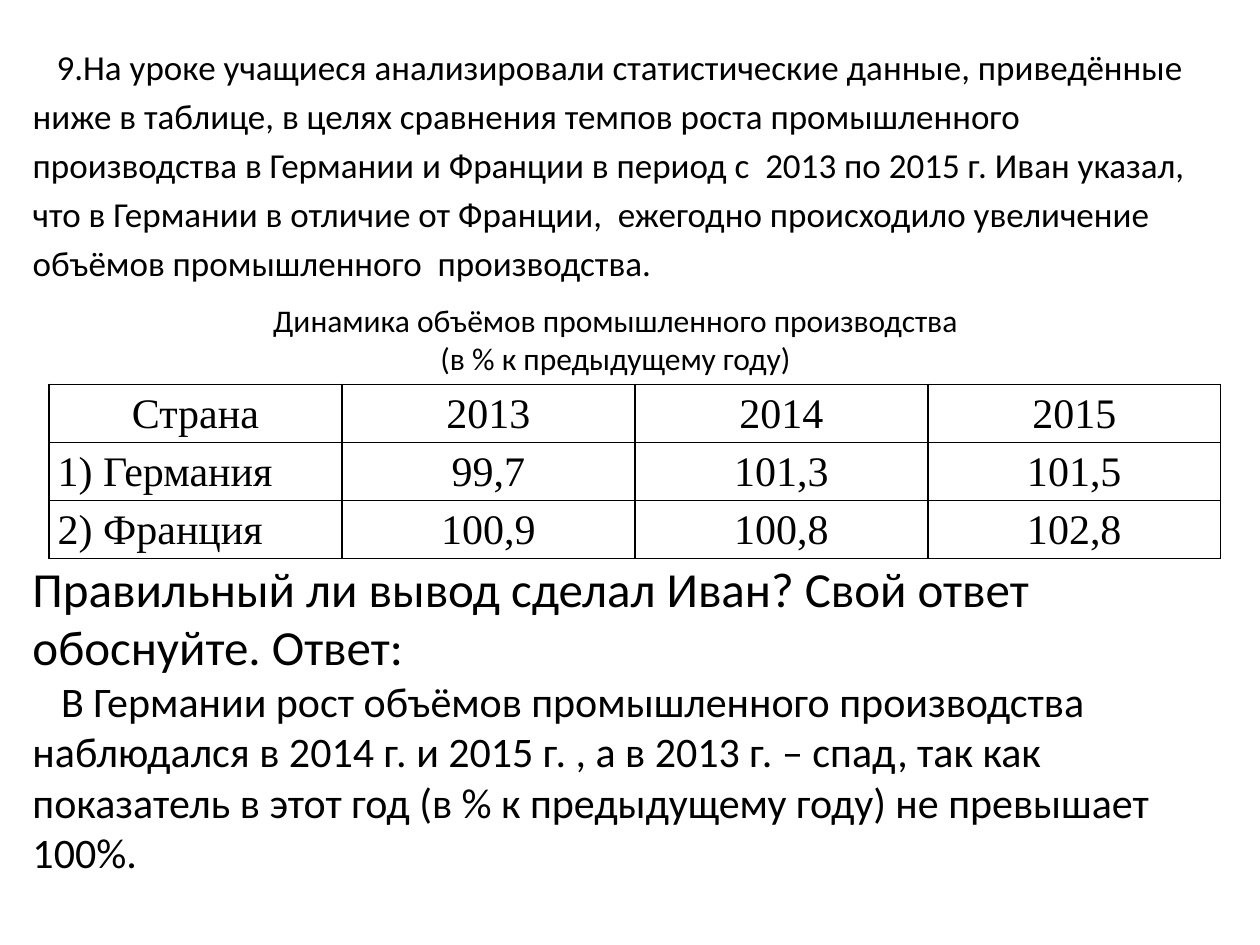
from dataclasses import dataclass

from lxml import etree
from pptx import Presentation
from pptx.dml.color import RGBColor
from pptx.enum import text
from pptx.oxml import ns
from pptx.util import Pt


@dataclass(frozen=True)
class Theme:
    ink: RGBColor = RGBColor(0, 0, 0)
    body_font: str = "Calibri"
    table_font: str = "Times New Roman"
    intro: int = 20
    caption: int = 18
    table: int = 24
    answer: int = 24
    question: int = 28
    border: int = 1


THEME = Theme()
LEFT = 11.5
TEXT_WIDTH = 697.5

INTRO = [
    "9.На уроке учащиеся анализировали статистические данные, приведённые",
    "ниже в таблице, в целях сравнения темпов роста промышленного",
    "производства в Германии и Франции в период с  2013 по 2015 г. Иван указал,",
    "что в Германии в отличие от Франции,  ежегодно происходило увеличение",
    "объёмов промышленного  производства.",
]
CAPTION = ["Динамика объёмов промышленного производства", "(в % к предыдущему году)"]
ROWS = [
    ["Страна", "2013", "2014", "2015"],
    ["1) Германия", "99,7", "101,3", "101,5"],
    ["2) Франция", "100,9", "100,8", "102,8"],
]
QUESTION = ["Правильный ли вывод сделал Иван? Свой ответ обоснуйте. Ответ:"]
ANSWER = [
    "В Германии рост объёмов промышленного производства наблюдался "
    "в 2014 г. и 2015 г. , а в 2013 г. – спад, так как показатель в этот год "
    "(в % к предыдущему году) не превышает 100%."
]


def add_run(paragraph, words, size, font=THEME.body_font):
    run = paragraph.add_run()
    run.text = words
    run.font.size = Pt(size)
    run.font.name = font
    run.font.color.rgb = THEME.ink


def set_indent(paragraph, first_line):
    properties = paragraph._p.get_or_add_pPr()
    properties.set("marL", "0")
    properties.set("indent", str(Pt(first_line)))


def fill_frame(frame, lines, size, align=text.PP_ALIGN.LEFT, first_line=0):
    frame.word_wrap = True
    for index, line in enumerate(lines):
        paragraph = frame.add_paragraph() if index else frame.paragraphs[0]
        paragraph.alignment = align
        set_indent(paragraph, 0 if index else first_line)
        add_run(paragraph, line, size)


def place_body(slide, left, top, width, height, lines, size, first_line):
    body = slide.placeholders[1]
    body.left, body.top, body.width, body.height = map(Pt, (left, top, width, height))
    fill_frame(body.text_frame, lines, size, first_line=first_line)
    body.text_frame.auto_size = text.MSO_AUTO_SIZE.NONE
    for paragraph in body.text_frame.paragraphs:
        etree.SubElement(paragraph._p.get_or_add_pPr(), ns.qn("a:buNone"))


def add_text(slide, left, top, width, height, lines, size, **layout):
    box = slide.shapes.add_textbox(*map(Pt, (left, top, width, height)))
    fill_frame(box.text_frame, lines, size, **layout)
    box.text_frame.auto_size = text.MSO_AUTO_SIZE.SHAPE_TO_FIT_TEXT


def set_borders(cell):
    properties = cell._tc.get_or_add_tcPr()
    for position, side in enumerate(("lnL", "lnR", "lnT", "lnB")):
        line = etree.Element(ns.qn(f"a:{side}"), w=str(Pt(THEME.border)))
        fill = etree.SubElement(line, ns.qn("a:solidFill"))
        etree.SubElement(fill, ns.qn("a:srgbClr"), val=str(THEME.ink))
        properties.insert(position, line)


def add_data_table(slide, left, top, width, height, rows):
    frame = slide.shapes.add_table(
        len(rows), len(rows[0]), *map(Pt, (left, top, width, height))
    )
    table = frame.table
    table.first_row = table.horz_banding = False
    for row_index, row in enumerate(rows):
        for column_index, value in enumerate(row):
            cell = table.cell(row_index, column_index)
            cell.fill.background()
            set_borders(cell)
            cell.margin_left = cell.margin_right = Pt(5)
            cell.margin_top = cell.margin_bottom = Pt(0)
            paragraph = cell.text_frame.paragraphs[0]
            paragraph.line_spacing = 1.15
            is_country = row_index > 0 and column_index == 0
            paragraph.alignment = (
                text.PP_ALIGN.LEFT if is_country else text.PP_ALIGN.CENTER
            )
            add_run(paragraph, value, THEME.table, THEME.table_font)


def main():
    presentation = Presentation()
    presentation.slide_width, presentation.slide_height = Pt(720), Pt(540)

    # The slide has body text but no title
    slide = presentation.slides.add_slide(presentation.slide_layouts[1])
    title = slide.shapes.title
    title._element.getparent().remove(title._element)

    # Task
    place_body(slide, LEFT, 22.3, TEXT_WIDTH, 152, INTRO, THEME.intro, first_line=13.6)

    # Captioned table
    add_text(slide, 90, 168.5, 523.5, 51, CAPTION, THEME.caption,
             align=text.PP_ALIGN.CENTER)
    add_data_table(slide, 28, 219.6, 669.6, 99.4, ROWS)

    # Answer and question
    add_text(slide, LEFT, 382.3, TEXT_WIDTH, 124, ANSWER, THEME.answer, first_line=16.3)
    add_text(slide, LEFT, 315.4, 692, 75, QUESTION, THEME.question)

    presentation.save("out.pptx")


if __name__ == "__main__":
    main()
